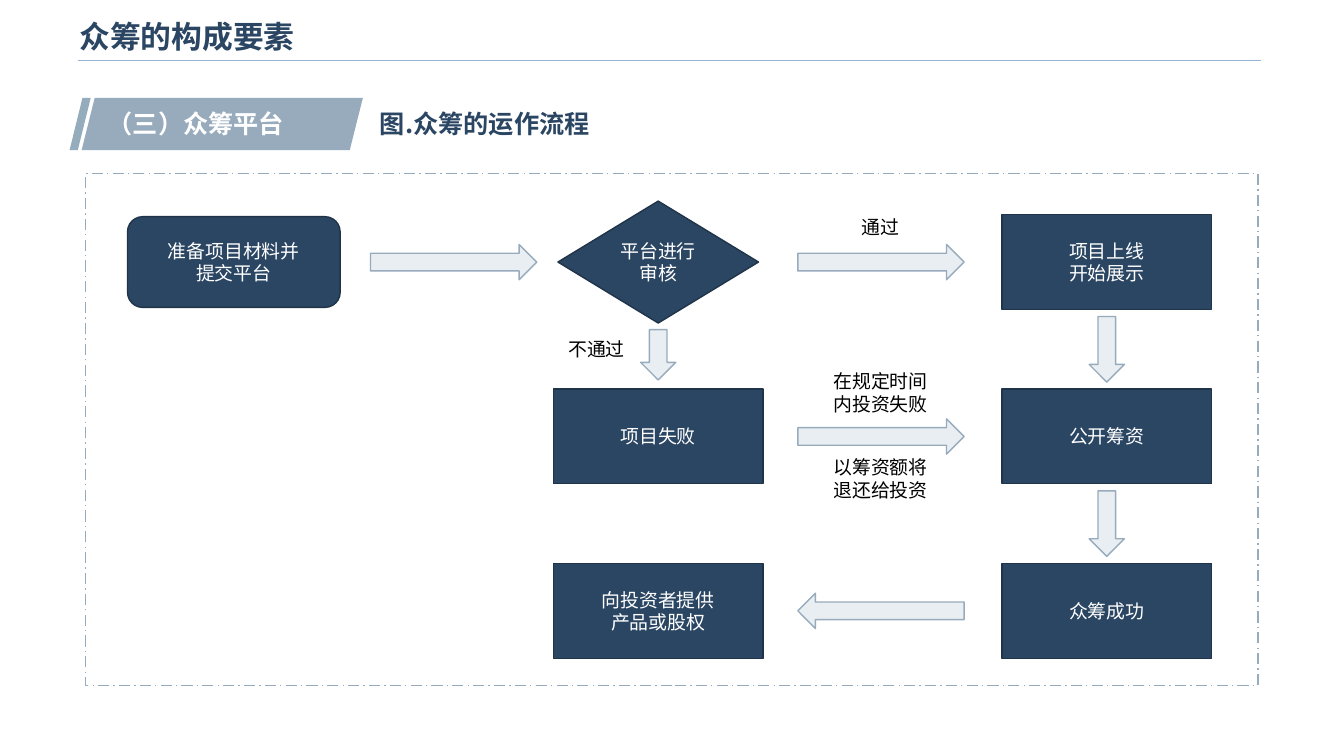
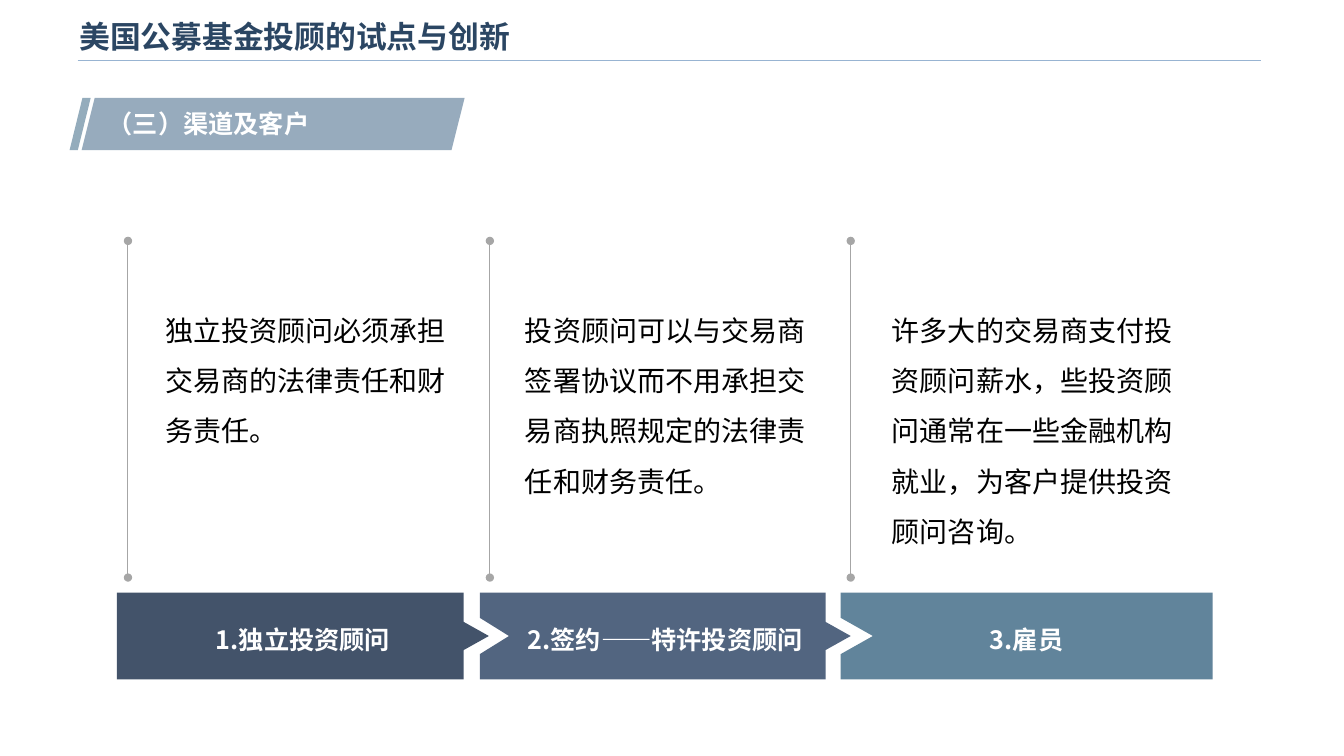
import pptx
import pptx.util
from pptx.dml.color import RGBColor
from pptx.enum.dml import MSO_LINE
from pptx.enum.shapes import MSO_CONNECTOR, MSO_SHAPE
from pptx.enum.text import MSO_ANCHOR, PP_ALIGN
from pptx.oxml.ns import qn
from lxml import etree

PX = 9144  # EMU per px, 100 px to the inch
NAVY = RGBColor(0x2B, 0x46, 0x63)
EDGE = RGBColor(0x20, 0x34, 0x49)
STEEL = RGBColor(0x97, 0xAB, 0xBD)
SLASH = RGBColor(0x94, 0xAC, 0xBC)
PALE = RGBColor(0xE8, 0xEE, 0xF2)
RULE = RGBColor(0x98, 0xB4, 0xD2)
GREY = RGBColor(0xA6, 0xA6, 0xA6)
WHITE = RGBColor(0xFF, 0xFF, 0xFF)
BLACK = RGBColor(0, 0, 0)
SANS, CJK = "Arial", "Noto Sans CJK SC"

# Flow chart grid: centres of columns and rows
COLS = (232, 653, 1098)
ROWS = (260, 433, 606)
BOX = (MSO_SHAPE.FLOWCHART_PROCESS, 208, 94)
START = (MSO_SHAPE.ROUNDED_RECTANGLE, 211, 90)
CHECK = (MSO_SHAPE.FLOWCHART_DECISION, 199, 121)
STEPS = [  # column, row, kind, text
    (0, 0, START, "准备项目材料并\n提交平台"),
    (1, 0, CHECK, "平台进行审核"),
    (1, 1, BOX, "项目失败"),
    (1, 2, BOX, "向投资者提供\n产品或股权"),
    (2, 0, BOX, "项目上线\n开始展示"),
    (2, 1, BOX, "公开筹资"),
    (2, 2, BOX, "众筹成功"),
]
RIGHT = (MSO_SHAPE.RIGHT_ARROW, 165, 35)
LEFT = (MSO_SHAPE.LEFT_ARROW, 165, 35)
DOWN = (MSO_SHAPE.DOWN_ARROW, 35, 65)
SHORT = (MSO_SHAPE.DOWN_ARROW, 35, 50)
GAP = 874  # centre of the gap between the last two columns
ARROWS = [  # centre x, centre y, kind
    (450, ROWS[0], RIGHT),
    (GAP, ROWS[0], RIGHT),
    (GAP, ROWS[1], RIGHT),
    (GAP, ROWS[2], LEFT),
    (COLS[2], (ROWS[0] + ROWS[1]) / 2, DOWN),
    (COLS[2], (ROWS[1] + ROWS[2]) / 2, DOWN),
    (COLS[1], 352, SHORT),
]
LABELS = [  # left, top, width, height, wrap, text
    (845, 209, 57, 33, False, "通过"),
    (554, 330, 76, 33, False, "不通过"),
    (808, 362, 131, 55, True, "在规定时间内投资失败"),
    (808, 447, 131, 55, True, "以筹资额将退还给投资"),
]

BAND_TOP, BAND_END = 588, 674
BANDS = [  # left, right, tip depth, notch depth, colour, heading
    (116, 460, 25, 0, RGBColor(0x43, 0x53, 0x6A), "1.独立投资顾问"),
    (476, 819, 25, 29, RGBColor(0x52, 0x65, 0x80), "2.签约——特许投资顾问"),
    (834, 1203, 0, 32, RGBColor(0x61, 0x84, 0x9B), "3.雇员"),
]
NOTES = [  # rule x, text left, text width, text
    (127, 154, 300, "独立投资顾问必须承担交易商的法律责任和财务责任。"),
    (486, 511, 319, "投资顾问可以与交易商签署协议而不用承担交易商执照规定的"
                    "法律责任和财务责任。"),
    (844, 875, 319, "许多大的交易商支付投资顾问薪水，些投资顾问通常在一些"
                    "金融机构就业，为客户提供投资顾问咨询。"),
]


def emu(*vals):
    return [pptx.util.Emu(round(v * PX)) for v in vals]


def write(shape, text, size, color, font=SANS, bold=False, center=False,
          middle=False, space=None, wrap=True):
    frame = shape.text_frame
    frame.text = text
    frame.word_wrap = wrap
    frame.vertical_anchor = MSO_ANCHOR.MIDDLE if middle else MSO_ANCHOR.TOP
    for para in frame.paragraphs:
        para.alignment = PP_ALIGN.CENTER if center else PP_ALIGN.LEFT
        if space:
            para.line_spacing = space
        for run in para.runs:
            run.font.size = pptx.util.Pt(size)
            run.font.bold = bold
            run.font.color.rgb = color
            run.font.name = font
            east = etree.SubElement(run.font._element, qn("a:ea"))
            east.set("typeface", CJK)


def label(slide, left, top, width, height, text, size, color, **style):
    box = slide.shapes.add_textbox(*emu(left, top, width, height))
    write(box, text, size, color, **style)


def paint(shape, fill=None, edge=None):
    shape.shadow.inherit = False
    if fill is None:
        shape.fill.background()
    else:
        shape.fill.solid()
        shape.fill.fore_color.rgb = fill
    if edge is None:
        shape.line.fill.background()
    else:
        shape.line.color.rgb = edge
        shape.line.width = pptx.util.Pt(1)


def draw(slide, kind, left, top, width, height, fill=None, edge=None):
    shape = slide.shapes.add_shape(kind, *emu(left, top, width, height))
    paint(shape, fill, edge)
    return shape


def node(slide, kind, x, y, fill, edge):
    """Draw a shape of the given (preset, width, height) centred on x, y."""
    preset, width, height = kind
    return draw(slide, preset, x - width / 2, y - height / 2, width, height,
                fill, edge)


def line(slide, x1, y1, x2, y2, color, weight, dots=False):
    link = slide.shapes.add_connector(MSO_CONNECTOR.STRAIGHT,
                                      *emu(x1, y1, x2, y2))
    link.line.color.rgb = color
    link.line.width = pptx.util.Pt(weight)
    if dots:
        for tag in ("a:headEnd", "a:tailEnd"):
            etree.SubElement(link.line._ln, qn(tag)).set("type", "oval")
    etree.SubElement(link._element.spPr, qn("a:effectLst"))


def start(deck, title, topic, width):
    """Add a slide with the title, its rule and the slanted topic tag."""
    slide = deck.slides.add_slide(deck.slide_layouts[6])
    line(slide, 77, 60, 1251, 60, RULE, 1)
    label(slide, 69, 9, 1071, 53, title, 22, NAVY, bold=True, middle=True)
    for left, wide, slant, fill in ((69, 21, 0.61, SLASH),
                                    (81, width, 0.25, STEEL)):
        tag = draw(slide, MSO_SHAPE.PARALLELOGRAM, left, 97, wide, 52, fill)
        tag.adjustments[0] = slant
    label(slide, 97, 103, width, 40, topic, 18, WHITE, font=CJK, bold=True)
    return slide


def band(slide, left, right, tip, notch, fill, text):
    """Draw a bar with an optional tip on the right and notch on the left."""
    mid = (BAND_TOP + BAND_END) / 2
    pts = [(left, BAND_TOP), (right, BAND_TOP)]
    if tip:
        pts += [(right, mid - 14), (right + tip, mid), (right, mid + 14)]
    pts += [(right, BAND_END), (left, BAND_END)]
    if notch:
        pts += [(left, mid + 18), (left + notch, mid), (left, mid - 18)]
    pts = [emu(*pt) for pt in pts]
    pen = slide.shapes.build_freeform(*pts[0])
    pen.add_line_segments(pts[1:])
    shape = pen.convert_to_shape()
    paint(shape, fill)
    write(shape, text, 18, WHITE, font=CJK, bold=True, center=True,
          middle=True, space=1.2)


def flow(deck):
    slide = start(deck, "众筹的构成要素", "（三）众筹平台", 279)
    frame = draw(slide, MSO_SHAPE.RECTANGLE, 85, 172, 1163, 508, edge=STEEL)
    frame.line.dash_style = MSO_LINE.LONG_DASH_DOT
    for col, row, kind, text in STEPS:
        step = node(slide, kind, COLS[col], ROWS[row], NAVY, EDGE)
        write(step, text, 13.5, WHITE, center=True, middle=True)
    for x, y, kind in ARROWS:
        node(slide, kind, x, y, PALE, STEEL)
    for *place, wrap, text in LABELS:
        label(slide, *place, text, 13.5, BLACK, center=wrap, wrap=wrap)
    label(slide, 367, 103, 278, 40, "图.众筹的运作流程", 18, NAVY,
          font=CJK, bold=True)


def clients(deck):
    slide = start(deck, "美国公募基金投顾的试点与创新", "（三）渠道及客户", 380)
    for item in BANDS:
        band(slide, *item)
    for x, left, width, text in NOTES:
        line(slide, x, 239, x, 573, GREY, 0.75, dots=True)
        label(slide, left, 289, width, 257, text, 20, BLACK, font=CJK,
              space=1.5)


def main():
    deck = pptx.Presentation()
    deck.slide_width, deck.slide_height = emu(1333.33, 750)
    flow(deck)
    clients(deck)
    deck.save("out.pptx")


if __name__ == "__main__":
    main()
